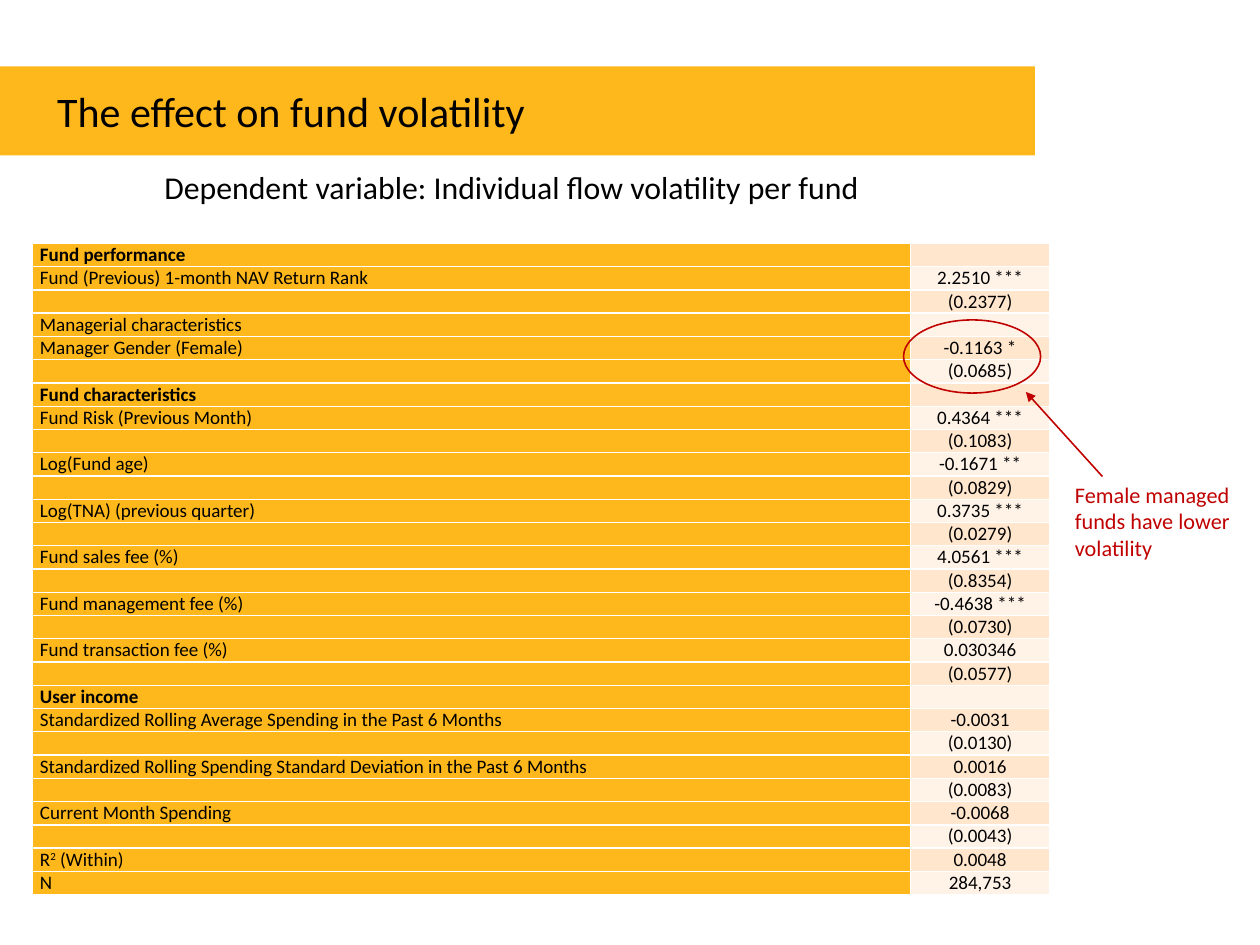
from lxml import etree
from pptx import Presentation
from pptx.dml.color import RGBColor
from pptx.enum.shapes import MSO_CONNECTOR, MSO_SHAPE
from pptx.enum.text import MSO_ANCHOR, PP_ALIGN
from pptx.oxml.ns import qn
from pptx.util import Inches, Pt

LEFT, CENTER = PP_ALIGN.LEFT, PP_ALIGN.CENTER
TOP, MIDDLE, BOTTOM = MSO_ANCHOR.TOP, MSO_ANCHOR.MIDDLE, MSO_ANCHOR.BOTTOM

# Content: a heading has no figures; text between carets is superscript
TITLE = "The effect on fund volatility"
SUBTITLE = "Dependent variable: Individual flow volatility per fund"
NOTE = "Female managed funds have lower volatility"
BOLD_HEADINGS = ("Fund performance", "Fund characteristics", "User income")
RESULTS = [
    ("Fund performance",),
    ("Fund (Previous) 1-month NAV Return Rank", "2.2510 ***", "(0.2377)"),
    ("Managerial characteristics",),
    ("Manager Gender (Female)", "-0.1163 *", "(0.0685)"),
    ("Fund characteristics",),
    ("Fund Risk (Previous Month)", "0.4364 ***", "(0.1083)"),
    ("Log(Fund age)", "-0.1671 **", "(0.0829)"),
    ("Log(TNA) (previous quarter)", "0.3735 ***", "(0.0279)"),
    ("Fund sales fee (%)", "4.0561 ***", "(0.8354)"),
    ("Fund management fee (%)", "-0.4638 ***", "(0.0730)"),
    ("Fund transaction fee (%)", "0.030346", "(0.0577)"),
    ("User income",),
    ("Standardized Rolling Average Spending in the Past 6 Months", "-0.0031", "(0.0130)"),
    ("Standardized Rolling Spending Standard Deviation in the Past 6 Months",
     "0.0016", "(0.0083)"),
    ("Current Month Spending", "-0.0068", "(0.0043)"),
    ("R^2^ (Within)", "0.0048"),
    ("N", "284,753"),
]

FONT = "Calibri"
GOLD, BLACK, WHITE, RED = "FFB81C", "000000", "FFFFFF", "C00000"
BANDS = ("FFE6CD", "FFF3E8")
COLUMN_WIDTHS = (7.69, 1.22)
ROW_HEIGHT = 0.2


def color(value):
    return RGBColor.from_string(value)


def write(frame, text, size=12, fill=BLACK, bold=False, align=LEFT):
    paragraph = frame.paragraphs[0]
    paragraph.alignment = align
    for index, part in enumerate(text.split("^")):
        run = paragraph.add_run()
        run.text = part
        run.font.name, run.font.size, run.font.bold = FONT, Pt(size), bold
        run.font.color.rgb = color(fill)
        if index % 2:
            run._r.get_or_add_rPr().set("baseline", "30000")


def add_text(slide, box, text, margins=(0.1, 0.05), **style):
    frame = slide.shapes.add_textbox(*map(Inches, box)).text_frame
    frame.word_wrap = True
    frame.vertical_anchor = TOP
    frame.margin_left = frame.margin_right = Inches(margins[0])
    frame.margin_top = frame.margin_bottom = Inches(margins[1])
    write(frame, text, **style)


def add_borders(properties):
    fill = properties[0]
    for side in ("a:lnL", "a:lnR", "a:lnT", "a:lnB"):
        line = etree.Element(qn(side), w=str(Pt(1)))
        solid = etree.SubElement(line, qn("a:solidFill"))
        etree.SubElement(solid, qn("a:srgbClr"), val=WHITE)
        fill.addprevious(line)


def fill_cell(cell, text, fill, **style):
    cell.margin_left = cell.margin_right = Inches(0.07)
    cell.margin_top = cell.margin_bottom = 0
    cell.vertical_anchor = BOTTOM
    cell.fill.solid()
    cell.fill.fore_color.rgb = color(fill)
    add_borders(cell._tc.get_or_add_tcPr())
    if text:
        write(cell.text_frame, text, **style)
    else:
        # An empty cell must not make its row taller
        paragraph = cell.text_frame.paragraphs[0]
        etree.SubElement(paragraph._p, qn("a:endParaRPr"), sz="1200")


def add_results(slide):
    rows = []
    for label, *figures in RESULTS:
        rows.append((label, figures[0] if figures else ""))
        rows.extend(("", error) for error in figures[1:])
    box = (0.28, 2.13, sum(COLUMN_WIDTHS), ROW_HEIGHT * len(rows))
    table = slide.shapes.add_table(len(rows), 2, *map(Inches, box)).table
    table.first_row = table.horz_banding = False
    for column, width in zip(table.columns, COLUMN_WIDTHS):
        column.width = Inches(width)
    for index, (label, figure) in enumerate(rows):
        fill_cell(table.cell(index, 0), label, GOLD, bold=label in BOLD_HEADINGS)
        fill_cell(table.cell(index, 1), figure, BANDS[index % 2], align=CENTER)


def add_title(slide):
    bar = slide.shapes.add_shape(MSO_SHAPE.RECTANGLE, *map(Inches, (0, 0.58, 9.06, 0.78)))
    bar.shadow.inherit = False
    bar.fill.solid()
    bar.fill.fore_color.rgb = color(GOLD)
    bar.line.fill.background()
    bar.text_frame.margin_left = Inches(0.5)
    bar.text_frame.vertical_anchor = MIDDLE
    bar.text_frame.word_wrap = True
    write(bar.text_frame, TITLE, size=26.5)


def add_highlight(slide):
    ring = slide.shapes.add_shape(MSO_SHAPE.OVAL, *map(Inches, (7.91, 2.8, 1.2, 0.64)))
    ring.shadow.inherit = False
    ring.fill.background()
    arrow = slide.shapes.add_connector(
        MSO_CONNECTOR.STRAIGHT, *map(Inches, (9.65, 4.17, 8.98, 3.43)))
    for shape in (ring, arrow):
        shape.line.color.rgb = color(RED)
        shape.line.width = Pt(1)
    etree.SubElement(arrow.line._get_or_add_ln(), qn("a:tailEnd"), type="triangle")
    etree.SubElement(arrow._element.spPr, qn("a:effectLst"))


def main():
    presentation = Presentation()
    presentation.slide_width, presentation.slide_height = Inches(11.03), Inches(8.27)
    slide = presentation.slides.add_slide(presentation.slide_layouts[6])

    # Regression table under its title and subtitle
    add_results(slide)
    add_text(slide, (1.34, 1.42, 7.8, 0.44), SUBTITLE, size=20)
    add_title(slide)

    # Ring, arrow and note on the gender estimate
    add_highlight(slide)
    add_text(slide, (9.41, 4.21, 1.44, 1.05), NOTE, margins=(0, 0), size=14, fill=RED)

    presentation.save("out.pptx")


if __name__ == "__main__":
    main()
